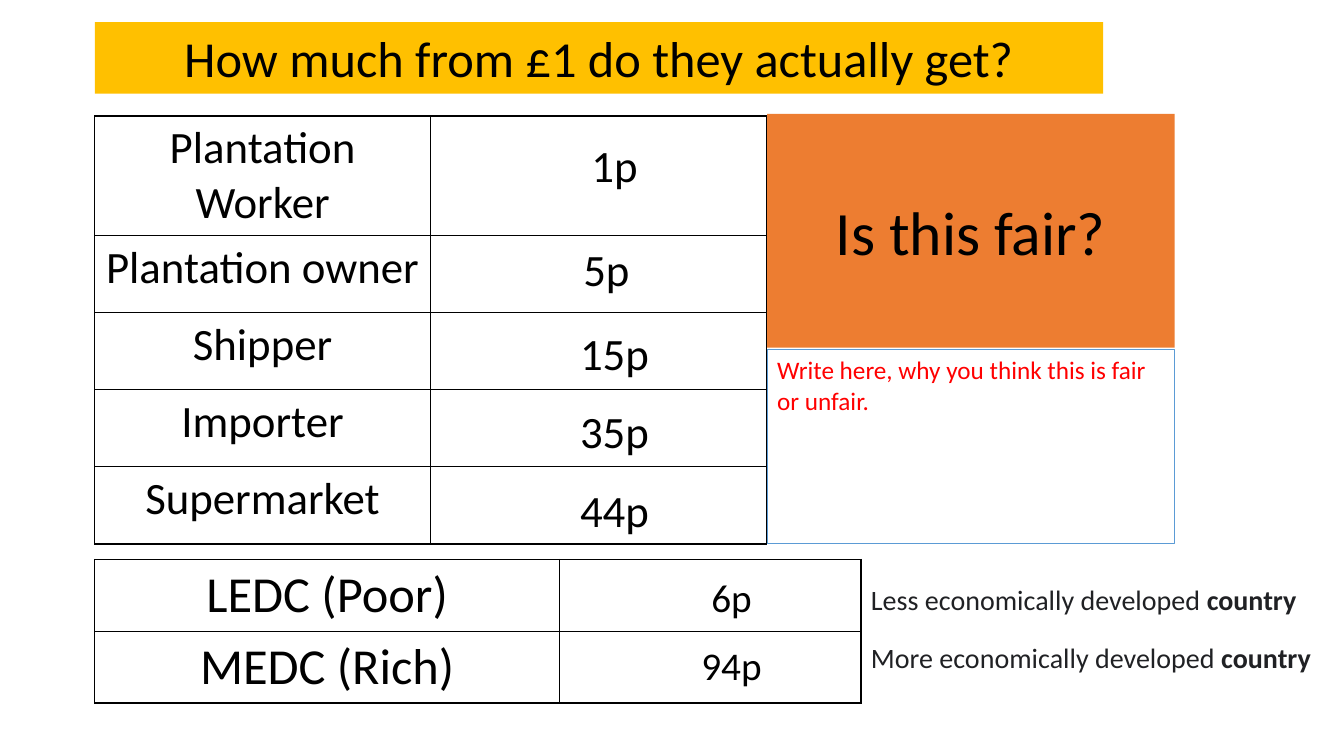
from dataclasses import dataclass

from lxml.etree import SubElement
from pptx import Presentation
from pptx.dml.color import RGBColor
from pptx.enum.shapes import MSO_SHAPE
from pptx.enum.text import MSO_ANCHOR, PP_ALIGN
from pptx.oxml.ns import qn
from pptx.util import Inches, Pt


@dataclass(frozen=True)
class Theme:
    font: str = "Calibri"
    black: str = "000000"
    white: str = "FFFFFF"
    gold: str = "FFC000"
    orange: str = "ED7D31"
    blue: str = "5B9BD5"
    red: str = "FF0000"
    charcoal: str = "202124"
    question_size: int = 44
    heading_size: int = 36
    row_size: int = 32
    share_size: int = 28
    note_size: int = 20
    prompt_size: int = 18
    border_width: float = 1
    prompt_line_width: float = 0.75


THEME = Theme()


def format_paragraph(paragraph, size, color=THEME.black, align=PP_ALIGN.CENTER):
    paragraph.alignment = align
    paragraph.font.name = THEME.font
    paragraph.font.size = Pt(size)
    paragraph.font.color.rgb = RGBColor.from_string(color)


def fill_solid(shape, color):
    shape.fill.solid()
    shape.fill.fore_color.rgb = RGBColor.from_string(color)


def add_box(slide, box, text, size, fill=None, color=THEME.black,
            align=PP_ALIGN.CENTER, anchor=MSO_ANCHOR.TOP):
    """Add a borderless rectangle with text; box is left, top, width, height in inches."""
    shape = slide.shapes.add_shape(MSO_SHAPE.RECTANGLE, *map(Inches, box))
    shape.shadow.inherit = False
    shape.line.fill.background()
    if fill:
        fill_solid(shape, fill)
    else:
        shape.fill.background()
    frame = shape.text_frame
    frame.word_wrap = True
    frame.vertical_anchor = anchor
    frame.text = text
    format_paragraph(frame.paragraphs[0], size, color, align)
    return shape


def draw_borders(cell):
    properties = cell._tc.get_or_add_tcPr()
    for side in ("a:lnL", "a:lnR", "a:lnT", "a:lnB"):
        line = SubElement(properties, qn(side), w=str(Pt(THEME.border_width)))
        fill = SubElement(line, qn("a:solidFill"))
        SubElement(fill, qn("a:srgbClr"), val=THEME.black)


def add_label_table(slide, left, top, column_widths, row_heights, labels, size):
    """Add a bordered table with labels in the first column and an empty second one."""
    table = slide.shapes.add_table(
        len(labels), len(column_widths), Inches(left), Inches(top),
        Inches(sum(column_widths)), Inches(sum(row_heights))).table
    table.first_row = table.horz_banding = False
    for column, width in zip(table.columns, column_widths):
        column.width = Inches(width)
    for row, height, label in zip(table.rows, row_heights, labels):
        row.height = Inches(height)
        row.cells[0].text = label
        format_paragraph(row.cells[0].text_frame.paragraphs[0], size)
        for cell in row.cells:
            draw_borders(cell)
            cell.fill.background()


def add_title(slide, box):
    title = slide.shapes.title
    title.left, title.top, title.width, title.height = map(Inches, box)
    fill_solid(title, THEME.gold)
    frame = title.text_frame
    frame.text = "How much from £1 do they actually get?"
    frame.vertical_anchor = MSO_ANCHOR.TOP
    paragraph = frame.paragraphs[0]
    format_paragraph(paragraph, THEME.heading_size)
    paragraph.line_spacing = 1.0


def add_chain_shares(slide, left, top):
    # Label, amount, amount's offset below the table top, amount's width
    chain = [
        ("Plantation Worker", "1p", 0.17, 1.81),
        ("Plantation owner", "5p", 1.2, 1.65),
        ("Shipper", "15p", 2.03, 1.81),
        ("Importer", "35p", 2.81, 1.81),
        ("Supermarket", "44p", 3.59, 1.81),
    ]
    labels = [entry[0] for entry in chain]
    row_heights = [1.17] + [0.765] * (len(chain) - 1)
    add_label_table(slide, left, top, [3.33, 3.33], row_heights, labels, THEME.row_size)
    for _, amount, offset, width in chain:
        add_box(slide, (left + 4.25, top + offset, width, 0.64), amount,
                THEME.row_size, THEME.white)


def add_country_note(slide, box, lead):
    frame = slide.shapes.add_textbox(*map(Inches, box)).text_frame
    frame.word_wrap = False
    paragraph = frame.paragraphs[0]
    paragraph.add_run().text = lead + " economically developed\u00a0"
    country = paragraph.add_run()
    country.text = "country"
    country.font.bold = True
    format_paragraph(paragraph, THEME.note_size, THEME.charcoal, PP_ALIGN.LEFT)


def add_country_shares(slide, left, top):
    # Label, amount, first word of the note, note's offset and width
    countries = [
        ("LEDC (Poor)", "6p", "Less", 0.18, 4.46),
        ("MEDC (Rich)", "94p", "More", 0.76, 4.6),
    ]
    column_widths = [4.61, 2.99]
    labels = [entry[0] for entry in countries]
    add_label_table(slide, left, top, column_widths, [0.7, 0.7], labels,
                    THEME.heading_size)
    for index, (_, amount, lead, offset, width) in enumerate(countries):
        add_box(slide, (left + 5.41, top + 0.09 + 0.67 * index, 1.81, 0.57), amount,
                THEME.share_size, THEME.white)
        add_country_note(slide, (left + sum(column_widths), top + offset, width, 0.44),
                         lead)


def add_question_panel(slide, left, top, width):
    add_box(slide, (left, top, width, 2.32), "Is this fair?", THEME.question_size,
            THEME.orange, anchor=MSO_ANCHOR.MIDDLE)
    prompt = add_box(slide, (left, top + 2.34, width, 1.92),
                     "Write here, why you think this is fair or unfair.",
                     THEME.prompt_size, color=THEME.red, align=PP_ALIGN.LEFT)
    prompt.line.color.rgb = RGBColor.from_string(THEME.blue)
    prompt.line.width = Pt(THEME.prompt_line_width)


def main():
    presentation = Presentation()
    presentation.slide_width = Inches(13.33)
    presentation.slide_height = Inches(7.5)
    title_only = presentation.slide_layouts.get_by_name("Title Only")
    slide = presentation.slides.add_slide(title_only)
    margin = 0.94
    add_title(slide, (margin, 0.22, 10, 0.71))
    add_chain_shares(slide, margin, 1.15)
    add_country_shares(slide, margin, 5.55)
    add_question_panel(slide, 7.61, 1.13, 4.04)
    presentation.save("out.pptx")


if __name__ == "__main__":
    main()
